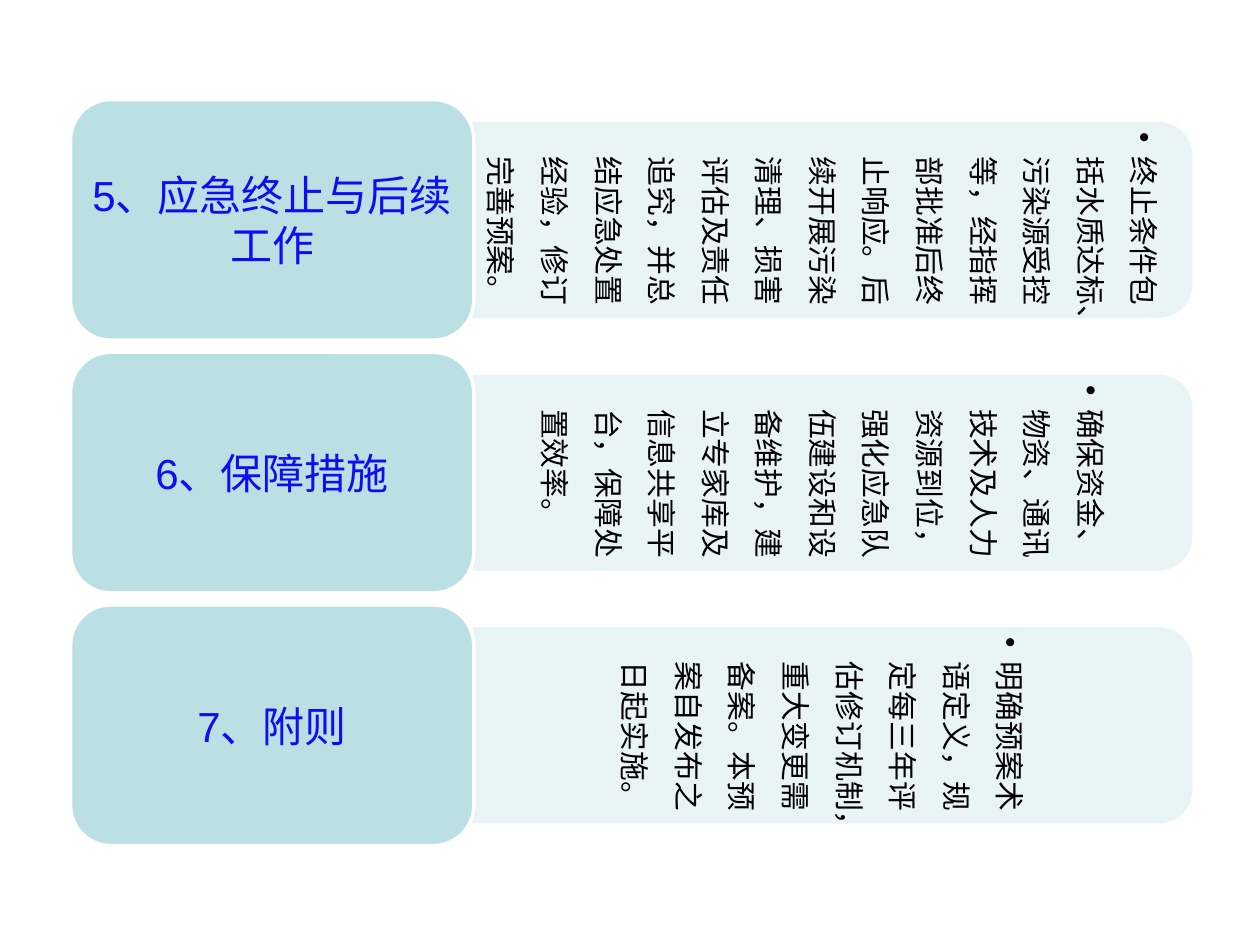
from dataclasses import dataclass

from lxml.etree import SubElement
from pptx import Presentation
from pptx.dml.color import RGBColor
from pptx.enum.shapes import MSO_SHAPE
from pptx.enum.text import MSO_ANCHOR, PP_ALIGN
from pptx.oxml.ns import qn
from pptx.util import Inches, Pt


@dataclass(frozen=True)
class Theme:
    font: str = "Arial"
    label_fill: str = "BBE0E3"
    label_line: str = "FFFFFF"
    label_text: str = "110CF2"
    label_size: int = 24
    bar_fill: str = "E7F3F4"
    bar_opacity: int = 90
    bar_text: str = "000000"
    bar_size: int = 17
    line_width: int = 2


@dataclass(frozen=True)
class Grid:
    left: float = 0.56
    top: float = 0.79
    width: float = 8.89
    row_height: float = 1.91
    label_share: float = 0.36
    bar_share: float = 0.8
    pitch_share: float = 1.05

    def label_area(self, row: int) -> "Area":
        top = self.top + row * self.row_height * self.pitch_share
        return Area(self.left, top, self.width * self.label_share, self.row_height)

    def bar_area(self, row: int) -> "Area":
        label = self.label_area(row)
        height = self.row_height * self.bar_share
        top = label.top + (self.row_height - height) / 2
        return Area(label.left + label.width, top, self.width - label.width, height)


@dataclass(frozen=True)
class Area:
    left: float
    top: float
    width: float
    height: float

    def emu(self) -> list:
        return [Inches(value) for value in (self.left, self.top, self.width, self.height)]

    def quarter_turned(self) -> "Area":
        shift = (self.width - self.height) / 2
        return Area(self.left + shift, self.top - shift, self.height, self.width)


@dataclass(frozen=True)
class Section:
    label: str
    detail: str


THEME = Theme()
GRID = Grid()
SECTIONS = (
    Section(
        "5、应急终止与后续工作",
        "终止条件包括水质达标、污染源受控等，经指挥部批准后终止响应。后续开展污染清理、"
        "损害评估及责任追究，并总结应急处置经验，修订完善预案。",
    ),
    Section(
        "6、保障措施",
        "确保资金、物资、通讯技术及人力资源到位，强化应急队伍建设和设备维护，"
        "建立专家库及信息共享平台，保障处置效率。",
    ),
    Section(
        "7、附则",
        "明确预案术语定义，规定每三年评估修订机制，重大变更需备案。本预案自发布之日起实施。",
    ),
)


def apply_format(target, values: dict) -> None:
    for name, value in values.items():
        setattr(target, name, value)


def add_block(slide, kind, area: Area, fill: str, line: str):
    block = slide.shapes.add_shape(kind, *area.emu())
    block.shadow.inherit = False
    block.fill.solid()
    block.fill.fore_color.rgb = RGBColor.from_string(fill)
    block.line.color.rgb = RGBColor.from_string(line)
    block.line.width = Pt(THEME.line_width)
    return block


def write_text(box, text: str, size: int, color: str, side: float, edge: float):
    frame = box.text_frame
    apply_format(frame, {
        "word_wrap": True,
        "vertical_anchor": MSO_ANCHOR.MIDDLE,
        "margin_left": Inches(side),
        "margin_right": Inches(side),
        "margin_top": Inches(edge),
        "margin_bottom": Inches(edge),
    })
    para = frame.paragraphs[0]
    span = para.add_run()
    span.text = text
    apply_format(span.font, {"name": THEME.font, "size": Pt(size)})
    span.font.color.rgb = RGBColor.from_string(color)
    return para


def add_bullet(para, indent: float) -> None:
    properties = para._p.get_or_add_pPr()
    properties.set("marL", str(Inches(indent)))
    properties.set("indent", str(-Inches(indent)))
    SubElement(properties, qn("a:buFont"), typeface=THEME.font)
    SubElement(properties, qn("a:buChar"), char="•")


def add_bar(slide, area: Area, detail: str) -> None:
    bar = add_block(slide, MSO_SHAPE.ROUND_2_SAME_RECTANGLE, area.quarter_turned(),
                    THEME.bar_fill, THEME.bar_fill)
    bar.rotation = 90
    for color in bar._element.spPr.iter(qn("a:srgbClr")):
        SubElement(color, qn("a:alpha"), val=str(THEME.bar_opacity * 1000))
    box = slide.shapes.add_textbox(*area.emu())
    para = write_text(box, detail, THEME.bar_size, THEME.bar_text, 0.04, 0.07)
    box.text_frame._txBody.bodyPr.set("vert", "vert")
    add_bullet(para, 0.19)
    apply_format(para, {"alignment": PP_ALIGN.LEFT, "line_spacing": 1.5})


def add_label(slide, area: Area, text: str) -> None:
    label = add_block(slide, MSO_SHAPE.ROUNDED_RECTANGLE, area,
                      THEME.label_fill, THEME.label_line)
    para = write_text(label, text, THEME.label_size, THEME.label_text, 0, 0)
    para.alignment = PP_ALIGN.CENTER


def main() -> None:
    deck = Presentation()
    apply_format(deck, {"slide_width": Inches(10), "slide_height": Inches(7.5)})
    page = deck.slides.add_slide(deck.slide_layouts.get_by_name("Blank"))
    for row, section in enumerate(SECTIONS):
        add_bar(page, GRID.bar_area(row), section.detail)
        add_label(page, GRID.label_area(row), section.label)
    deck.save("out.pptx")


if __name__ == "__main__":
    main()
